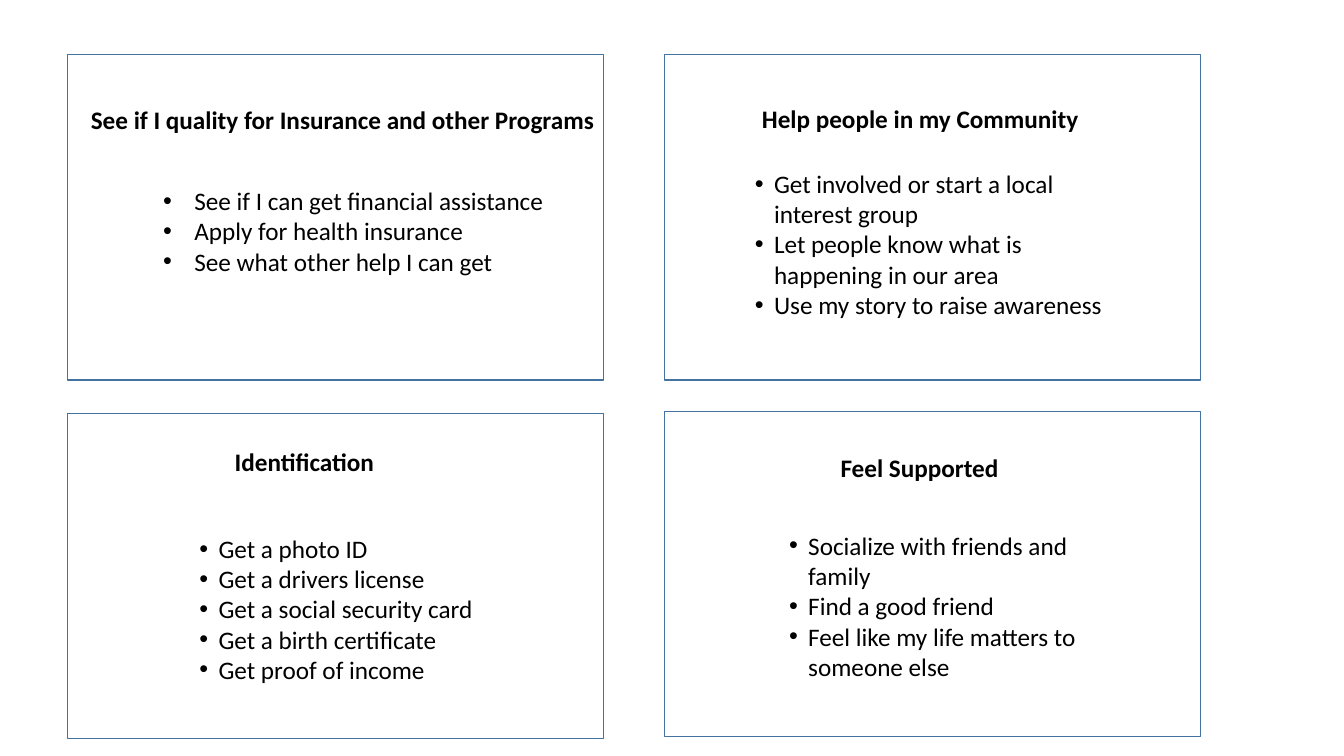
from dataclasses import dataclass

from lxml import etree
from pptx import Presentation, util as u
from pptx.dml.color import RGBColor
from pptx.enum import shapes, text
from pptx.oxml import ns

BLACK = RGBColor(0x00, 0x00, 0x00)
PANEL_BLUE = RGBColor(0x43, 0x73, 0x9E)

CELL = u.Inches(0.1)  # side of one square grid cell
SLIDE_SIZE = (133.33, 75)
PANEL_SIZE = (53.2, 32.3)
LEFT, RIGHT = 6.7, 65.9
TOP = 5.4


@dataclass
class Card:
    """A panel; heading and list areas are (column, row, columns, rows)."""
    corner: tuple
    heading: str
    heading_area: tuple
    items: list
    list_area: tuple
    heading_format: dict
    list_wraps: bool = True
    indent: float = 1.9


CARDS = [
    Card((LEFT, TOP), "See if I quality for Insurance and other Programs",
         (7.8, 9.9, 52.4, 4),
         ["See if I can get financial assistance", "Apply for health insurance",
          "See what other help I can get"],
         (15.2, 17.9, 39.9, 10.1),
         {"align": text.PP_ALIGN.CENTER, "wrap": False}, indent=3.1),
    Card((RIGHT, TOP), "Help people in my Community", (72.8, 9.8, 37, 4),
         ["Get involved or start a local interest group",
          "Let people know what is happening in our area",
          "Use my story to raise awareness"],
         (73.9, 16.2, 37.1, 16.2),
         {"align": text.PP_ALIGN.CENTER}),
    Card((LEFT, 41), "Identification", (22.3, 43.8, 16, 4),
         ["Get a photo ID", "Get a drivers license", "Get a social security card",
          "Get a birth certificate", "Get proof of income"],
         (18.8, 52.4, 29.4, 16.2),
         {"wrap": False}, list_wraps=False),
    Card((RIGHT, 40.8), "Feel Supported", (82.4, 44.4, 17.8, 4),
         ["Socialize with friends and family", "Find a good friend",
          "Feel like my life matters to someone else"],
         (77.3, 52.1, 35.3, 16.2),
         {"wrap": False}),
]


def cells(*counts):
    return [u.Emu(round(count * CELL)) for count in counts]


class CardPage:
    FONT = {"name": "Calibri", "size": u.Pt(18)}

    def __init__(self, deck):
        self.page = deck.slides.add_slide(deck.slide_layouts[6])

    def panel(self, corner):
        panel = self.page.shapes.add_shape(
            shapes.MSO_SHAPE.RECTANGLE, *cells(*corner, *PANEL_SIZE))
        panel.shadow.inherit = False
        panel.fill.background()
        panel.line.color.rgb = PANEL_BLUE
        panel.line.width = u.Pt(1)

    def text_box(self, area, lines, wrap=True, align=None, bold=False):
        """Add one paragraph per line and return the paragraphs."""
        frame = self.page.shapes.add_textbox(*cells(*area)).text_frame
        frame.word_wrap = wrap
        frame.auto_size = text.MSO_AUTO_SIZE.SHAPE_TO_FIT_TEXT
        frame.text = "\n".join(lines)
        for para in frame.paragraphs:
            para.alignment = align
            for span in para.runs:
                for name, value in {**self.FONT, "bold": bold}.items():
                    setattr(span.font, name, value)
                span.font.color.rgb = BLACK
        return frame.paragraphs

    def heading(self, area, words, **style):
        self.text_box(area, [words], bold=True, **style)

    def bullet_list(self, area, items, indent, wrap):
        (hang,) = cells(indent)
        for para in self.text_box(area, items, wrap=wrap):
            properties = para._p.get_or_add_pPr()
            properties.set("marL", str(hang))
            properties.set("indent", str(-hang))
            etree.SubElement(properties, ns.qn("a:buFont"), typeface="Arial")
            etree.SubElement(properties, ns.qn("a:buChar"), char="•")


def main():
    deck = Presentation()
    deck.slide_width, deck.slide_height = cells(*SLIDE_SIZE)
    page = CardPage(deck)
    for card in CARDS:
        page.panel(card.corner)
    for card in CARDS:
        page.heading(card.heading_area, card.heading, **card.heading_format)
        page.bullet_list(card.list_area, card.items, card.indent, card.list_wraps)
    deck.save("out.pptx")


if __name__ == "__main__":
    main()
